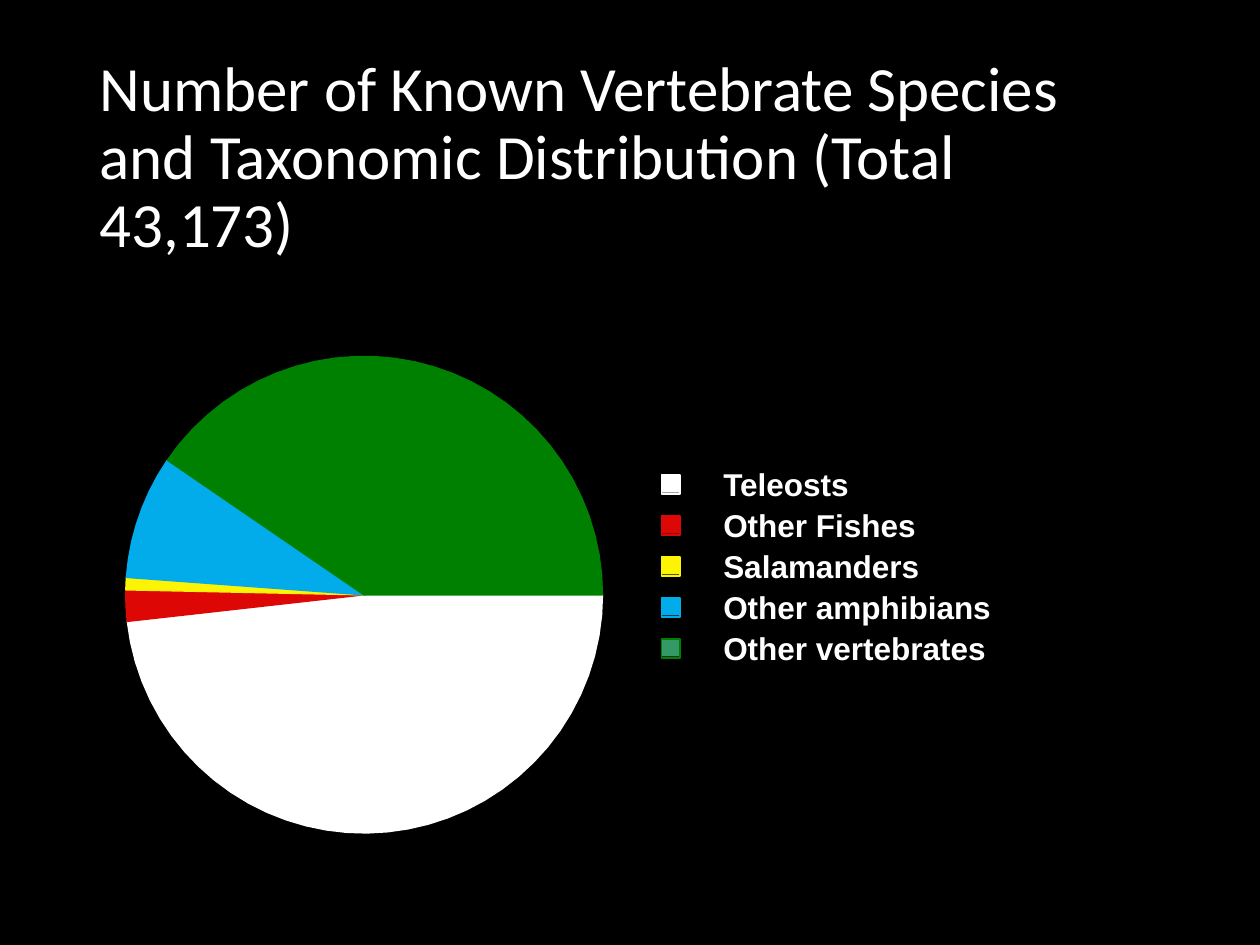
from math import ceil, cos, radians, sin

from pptx import Presentation
from pptx.dml.color import RGBColor
from pptx.enum import shapes, text
from pptx.util import Inches, Pt

WHITE = "FFFFFF"
GROUPS = [
    ("Teleosts", 173.6, WHITE, WHITE),
    ("Other Fishes", 181.2, "DD0806", "DD0806"),
    ("Salamanders", 184.2, "FCF305", "FCF305"),
    ("Other amphibians", 214.4, "02ABEA", "02ABEA"),
    ("Other vertebrates", 360, "008000", "339966"),
]


def paint(target, color):
    """Give a fill or line format a solid hex colour."""
    target.fill.solid() if hasattr(target, "fill") else target.solid()
    colors = target.fill.fore_color if hasattr(target, "fill") else target.fore_color
    colors.rgb = RGBColor.from_string(color)


def style_shape(shape, fill=None, line=None):
    """Set fill and one-point outline, leaving out whichever is not given."""
    shape.shadow.inherit = False
    for target, color in ((shape.fill, fill), (shape.line, line)):
        if color:
            paint(target, color)
        else:
            getattr(target, "fill", target).background()
    if line:
        shape.line.width = Pt(1)


def write(frame, words, frame_format, font_format, spacing=None):
    """Write one left-aligned white paragraph into a text frame."""
    frame.text = words
    for name, value in frame_format.items():
        setattr(frame, name, value)
    para = frame.paragraphs[0]
    para.alignment = text.PP_ALIGN.LEFT
    para.line_spacing = spacing
    font = para.runs[0].font
    for name, value in font_format.items():
        setattr(font, name, value)
    font.color.rgb = RGBColor.from_string(WHITE)


def add_title(page, left, top, width, height):
    """Place the slide title."""
    title = page.shapes.title
    place = dict(left=left, top=top, width=width, height=height)
    for name, value in place.items():
        setattr(title, name, Inches(value))
    write(
        title.text_frame,
        "Number of Known Vertebrate Species and Taxonomic Distribution (Total 43,173)",
        dict(word_wrap=True, auto_size=text.MSO_AUTO_SIZE.NONE,
             vertical_anchor=text.MSO_ANCHOR.TOP),
        dict(name="Calibri", size=Pt(36), bold=False),
        0.9,
    )


def add_pie(page, left, top, size):
    """Draw the slices clockwise from three o'clock inside a square box."""
    radius = size / 2
    center = Inches(left + radius), Inches(top + radius)
    pie = page.shapes.add_group_shape()
    start = 0
    for _, end, color, _ in GROUPS:
        steps = ceil((end - start) / 5)
        angles = [radians(start + (end - start) * i / steps) for i in range(steps + 1)]
        rim = [(center[0] + Inches(radius * cos(a)), center[1] + Inches(radius * sin(a)))
               for a in angles]
        builder = pie.shapes.build_freeform(*center)
        builder.add_line_segments(rim, close=True)
        style_shape(builder.convert_to_shape(), color, color)
        start = end


def add_legend(page, left, top, width, pitch):
    """List the groups, each with a framed colour swatch."""
    for row, (name, _, frame_color, fill_color) in enumerate(GROUPS):
        y = top + row * pitch
        for side, colors in ((0.14, dict(fill=fill_color)), (0.15, dict(line=frame_color))):
            swatch = page.shapes.add_shape(
                shapes.MSO_SHAPE.RECTANGLE,
                Inches(left), Inches(y + 0.08), Inches(side), Inches(side))
            style_shape(swatch, **colors)
        label = page.shapes.add_textbox(
            Inches(left + 0.49), Inches(y), Inches(width - 0.49), Inches(0.3))
        margins = {f"margin_{side}": 0 for side in ("left", "top", "right", "bottom")}
        write(label.text_frame, name, dict(margins, word_wrap=False),
              dict(name="Arial", size=Pt(18), bold=True))


def main():
    """Build and save the slide."""
    deck = Presentation()
    deck.slide_width, deck.slide_height = Inches(10), Inches(7.5)
    page = deck.slides.add_slide(deck.slide_layouts[5])
    paint(page.background, "000000")
    add_pie(page, 1, 2.83, 3.78)
    add_legend(page, 5.25, 3.69, 2.64, 0.325)
    add_title(page, 0.69, 0.4, 8.62, 1.45)
    deck.save("out.pptx")


if __name__ == "__main__":
    main()
